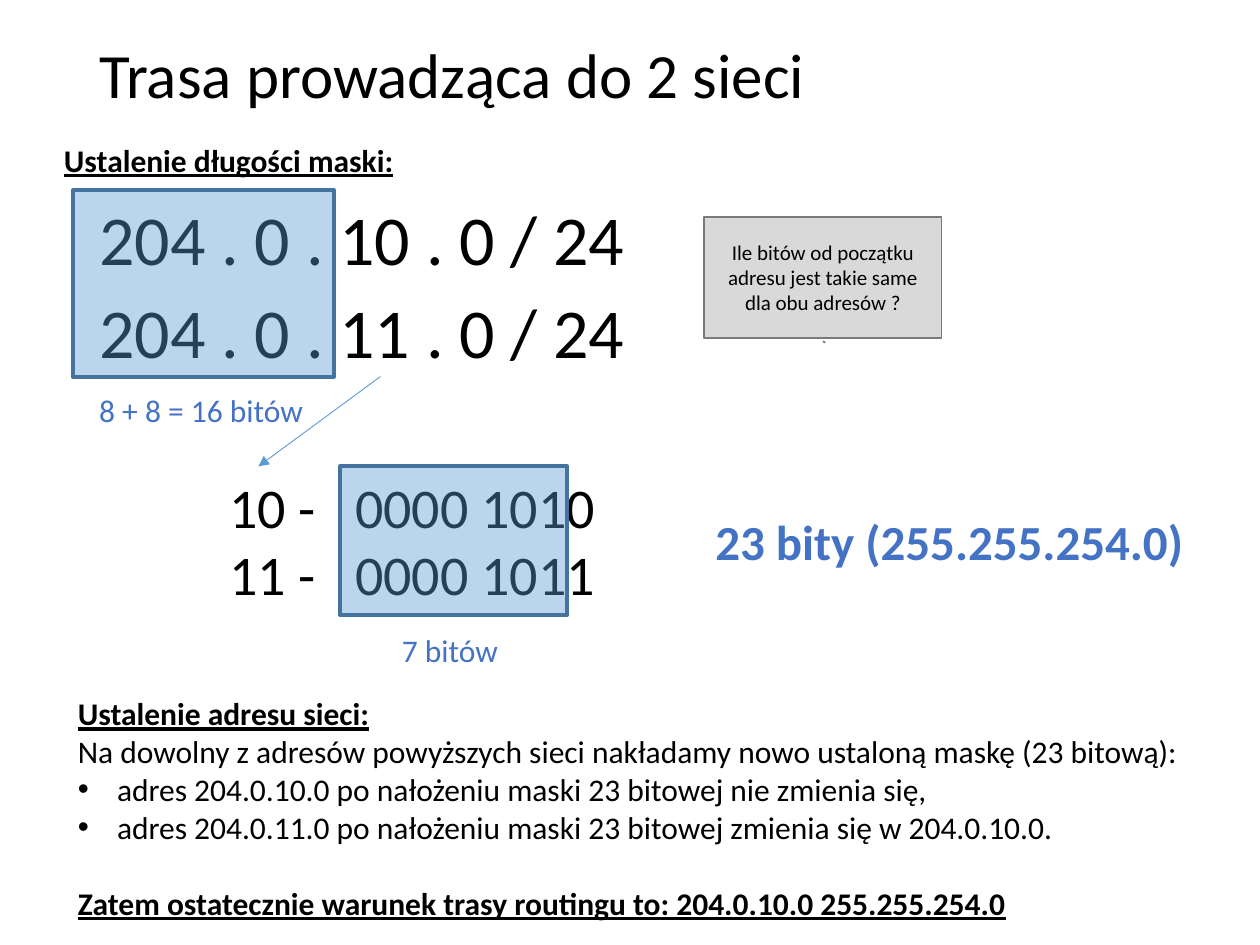
from lxml import etree
from pptx import Presentation
from pptx.dml.color import RGBColor
from pptx.enum import shapes, text
from pptx.oxml.ns import qn
from pptx.util import Cm, Pt

BLACK = RGBColor(0x00, 0x00, 0x00)
ACCENT = RGBColor(0x44, 0x72, 0xC4)
SKY = RGBColor(0x5B, 0x9B, 0xD5)
STEEL = RGBColor(0x43, 0x73, 0x9E)
LIGHT_GRAY = RGBColor(0xD9, 0xD9, 0xD9)
GRAY = RGBColor(0x7A, 0x7A, 0x7A)
FONT = "Calibri"

TITLE = "Trasa prowadząca do 2 sieci"
NETWORKS = ["204 . 0 . 10 . 0 / 24", "204 . 0 . 11 . 0 / 24"]
OCTETS = ["10 -\t0000 1010", "11 - \t0000 1011"]
QUESTION = "Ile bitów od początku adresu jest takie same dla obu adresów ?"
LABELS = [
    ("Ustalenie długości maski:", (1.04, 2.72, 7.21, 1.02), 18, BLACK, True, True),
    ("8 + 8 = 16 bitów", (1.75, 7.75, 4.67, 1.02), 18, ACCENT, False, False),
    ("7 bitów", (7.85, 12.6, 2.46, 1.02), 18, ACCENT, False, False),
    ("23 bity (255.255.254.0)", (14.17, 10.19, 10.08, 1.45), 28, ACCENT, True, False),
]
SUMMARY = [
    ("head", "Ustalenie adresu sieci:"),
    ("plain", "Na dowolny z adresów powyższych sieci nakładamy nowo ustaloną maskę (23 bitową):"),
    ("bullet", "adres 204.0.10.0 po nałożeniu maski 23 bitowej nie zmienia się,"),
    ("bullet", "adres 204.0.11.0 po nałożeniu maski 23 bitowej zmienia się w 204.0.10.0."),
    ("head", "Zatem ostatecznie warunek trasy routingu to: 204.0.10.0 255.255.254.0"),
]
COMMON_BITS = [(1.47, 3.84, 5.26, 3.76), (6.86, 9.4, 4.57, 3)]


def box(at):
    return [Cm(v) for v in at]


def place(sp, at):
    sp.left, sp.top, sp.width, sp.height = box(at)


def style(p, size, color=BLACK, bold=False, underline=False):
    for r in p.runs:
        f = r.font
        f.name, f.size, f.bold, f.underline = FONT, Pt(size), bold, underline
        f.color.rgb = color


def set_bullet(p, char=None, indent=0):
    pPr = p._p.get_or_add_pPr()
    pPr.set("marL", str(Cm(indent)))
    pPr.set("indent", str(-Cm(indent)))
    if char:
        etree.SubElement(pPr, qn("a:buFont"), typeface="Arial")
        etree.SubElement(pPr, qn("a:buChar"), char=char)
    else:
        etree.SubElement(pPr, qn("a:buNone"))


def add_text(s, at, lines, wrap=False):
    tf = s.shapes.add_textbox(*box(at)).text_frame
    tf.text = "\n".join(lines)
    tf.word_wrap = wrap
    tf.auto_size = text.MSO_AUTO_SIZE.SHAPE_TO_FIT_TEXT
    return tf.paragraphs


def add_box(s, kind, at, fill, line, width):
    sp = s.shapes.add_shape(kind, *box(at))
    sp.shadow.inherit = False
    sp.fill.solid()
    sp.fill.fore_color.rgb = fill
    sp.line.color.rgb = line
    sp.line.width = Pt(width)
    return sp


def add_arrow(s, x1, y1, x2, y2):
    c = s.shapes.add_connector(shapes.MSO_CONNECTOR.STRAIGHT, *box((x1, y1, x2, y2)))
    c.line.color.rgb = SKY
    c.line.width = Pt(0.5)
    etree.SubElement(c.line._get_or_add_ln(), qn("a:tailEnd"), type="triangle")
    etree.SubElement(c._element.spPr, qn("a:effectLst"))


def main():
    prs = Presentation()
    prs.slide_width, prs.slide_height = Cm(25.4), Cm(19.05)
    s = prs.slides.add_slide(prs.slide_layouts[1])

    title, body = s.placeholders
    place(title, (1.75, 0.51, 21.89, 2.11))
    tf = title.text_frame
    tf.text = TITLE
    tf.vertical_anchor = text.MSO_ANCHOR.MIDDLE
    p = tf.paragraphs[0]
    p.alignment, p.line_spacing = text.PP_ALIGN.LEFT, 0.9
    style(p, 36)

    place(body, (1.75, 4.01, 21.89, 4.11))
    tf = body.text_frame
    tf.text = "\n".join(NETWORKS)
    tf.auto_size = text.MSO_AUTO_SIZE.NONE
    for i, p in enumerate(tf.paragraphs):
        set_bullet(p)
        p.line_spacing, p.space_before = 0.9, Pt(10 if i else 0)
        style(p, 40)

    callout = add_box(s, shapes.MSO_SHAPE.LINE_CALLOUT_1, (14.2, 4.37, 4.78, 2.44),
                      LIGHT_GRAY, GRAY, 1)
    for i, v in enumerate((1.03, 0.5, 1.04, 0.51)):
        callout.adjustments[i] = v
    tf = callout.text_frame
    tf.text = QUESTION
    tf.word_wrap = True
    tf.vertical_anchor = text.MSO_ANCHOR.MIDDLE
    tf.paragraphs[0].alignment = text.PP_ALIGN.CENTER
    style(tf.paragraphs[0], 12)

    for p in add_text(s, (4.37, 9.4, 8.15, 3), OCTETS, wrap=True):
        style(p, 32)

    for at in COMMON_BITS:
        sp = add_box(s, shapes.MSO_SHAPE.RECTANGLE, at, SKY, STEEL, 2.25)
        clr = sp._element.spPr.find(qn("a:solidFill"))[0]
        etree.SubElement(clr, qn("a:alpha"), val="41000")

    add_arrow(s, 7.67, 7.59, 5.21, 9.4)

    for label, at, size, color, bold, underline in LABELS:
        style(add_text(s, at, [label])[0], size, color, bold, underline)

    paragraphs = add_text(s, (1.32, 13.87, 22.94, 4.88), [t for _, t in SUMMARY])
    for (kind, _), p in zip(SUMMARY, paragraphs):
        if kind == "bullet":
            set_bullet(p, "•", 0.79)
        style(p, 18, bold=kind == "head", underline=kind == "head")
    paragraphs[-1].space_before = Pt(22)

    prs.save("out.pptx")


if __name__ == "__main__":
    main()
